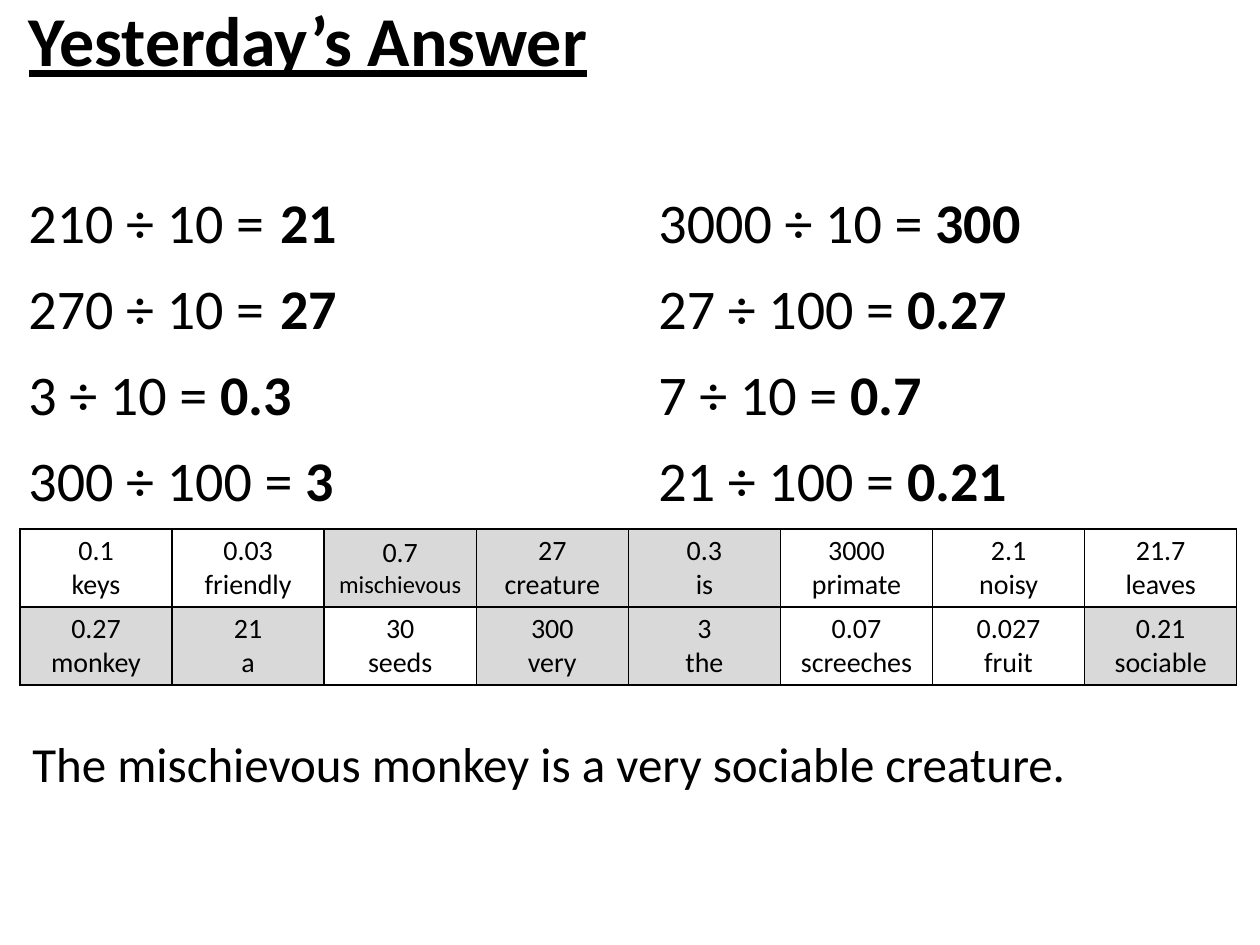
from dataclasses import dataclass

from lxml import etree
from pptx import Presentation
from pptx import util as u
from pptx.dml.color import RGBColor
from pptx.enum import text
from pptx.oxml import ns

DPI = 126


@dataclass(frozen=True)
class Theme:
    font: str = "Calibri"
    ink: str = "000000"
    mark: str = "D9D9D9"
    paper: str = "FFFFFF"
    title: int = 40
    sums: int = 32
    close: int = 28
    cell: int = 16
    small: int = 14


THEME = Theme()

SUMS = [
    (("210 ÷ 10 = \t", "21"), ("3000 ÷ 10 = ", "300")),
    (("270 ÷ 10 = \t", "27"), ("27 ÷ 100 = ", "0.27")),
    (("3 ÷ 10 = ", "0.3"), ("7 ÷ 10 = ", "0.7")),
    (("300 ÷ 100 = ", "3"), ("21 ÷ 100 = ", "0.21")),
]
WORDS = [
    [("0.1", "keys"), ("0.03", "friendly"), ("0.7", "mischievous"), ("27", "creature"),
     ("0.3", "is"), ("3000", "primate"), ("2.1", "noisy"), ("21.7", "leaves")],
    [("0.27", "monkey"), ("21", "a"), ("30", "seeds"), ("300", "very"),
     ("3", "the"), ("0.07", "screeches"), ("0.027", "fruit"), ("0.21", "sociable")],
]
ANSWERS = {right for row in SUMS for _, right in row}


def px(n):
    return u.Emu(round(n * 914400 / DPI))


def style(font, size, bold=None):
    font.name = THEME.font
    font.size = u.Pt(size)
    font.bold = bold
    font.color.rgb = RGBColor.from_string(THEME.ink)


def add_frame(slide, box):
    frame = slide.shapes.add_textbox(*map(px, box)).text_frame
    frame.word_wrap = True
    return frame


def set_title(slide, box, words):
    shape = slide.shapes.title
    shape.left, shape.top, shape.width, shape.height = map(px, box)
    frame = shape.text_frame
    frame.text = words
    frame.vertical_anchor = text.MSO_ANCHOR.TOP
    frame.auto_size = text.MSO_AUTO_SIZE.NONE
    para = frame.paragraphs[0]
    para.alignment = text.PP_ALIGN.LEFT
    para.line_spacing = 0.9
    style(para.font, THEME.title, True)
    para.font.underline = True


def set_tabs(para, stops):
    tabs = etree.SubElement(para._p.get_or_add_pPr(), ns.qn("a:tabLst"))
    for stop in stops:
        etree.SubElement(tabs, ns.qn("a:tab"), pos=str(px(stop)), algn="l")


def add_sums(slide, box):
    frame = add_frame(slide, box)
    for i, (left, right) in enumerate(SUMS):
        para = frame.add_paragraph() if i else frame.paragraphs[0]
        para.line_spacing = 0.9
        para.space_after = u.Pt(14.5)
        set_tabs(para, (2 * DPI, 5 * DPI))
        for part, bold in ((left[0], False), (left[1], True),
                           ("\t" + right[0], False), (right[1], True)):
            run = para.add_run()
            run.text = part
            style(run.font, THEME.sums, bold)


def set_edges(cell):
    """Draw a thin line on all four sides; call before the fill is set."""
    props = cell._tc.get_or_add_tcPr()
    for side in ("lnL", "lnR", "lnT", "lnB"):
        line = etree.SubElement(props, ns.qn("a:" + side), w=str(u.Pt(1)))
        fill = etree.SubElement(line, ns.qn("a:solidFill"))
        etree.SubElement(fill, ns.qn("a:srgbClr"), val=THEME.ink)


def fill_cell(cell, number, word):
    set_edges(cell)
    cell.fill.solid()
    shade = THEME.mark if number in ANSWERS else THEME.paper
    cell.fill.fore_color.rgb = RGBColor.from_string(shade)
    cell.vertical_anchor = text.MSO_ANCHOR.MIDDLE
    cell.margin_left = cell.margin_right = px(9)
    cell.margin_top = cell.margin_bottom = px(5)
    cell.text = f"{number}\n{word}"
    for para, part in zip(cell.text_frame.paragraphs, (number, word)):
        para.alignment = text.PP_ALIGN.CENTER
        style(para.font, THEME.small if len(part) > 10 else THEME.cell)


def add_words(slide, box):
    table = slide.shapes.add_table(len(WORDS), len(WORDS[0]), *map(px, box)).table
    table.first_row = table.horz_banding = False
    for r, row in enumerate(WORDS):
        for c, pair in enumerate(row):
            fill_cell(table.cell(r, c), *pair)


def add_close(slide, box, words):
    para = add_frame(slide, box).paragraphs[0]
    para.text = words
    style(para.font, THEME.close)


def main():
    deck = Presentation()
    deck.slide_width, deck.slide_height = px(1260), px(945)
    slide = deck.slides.add_slide(deck.slide_layouts.get_by_name("Title Only"))
    set_title(slide, (16, 0, 1244, 90), "Yesterday’s Answer")
    add_sums(slide, (16, 189, 1244, 336))
    add_words(slide, (20, 529, 1217, 156))
    add_close(slide, (20, 727, 1217, 72),
              "The mischievous monkey is a very sociable creature.")
    deck.save("out.pptx")


if __name__ == "__main__":
    main()
